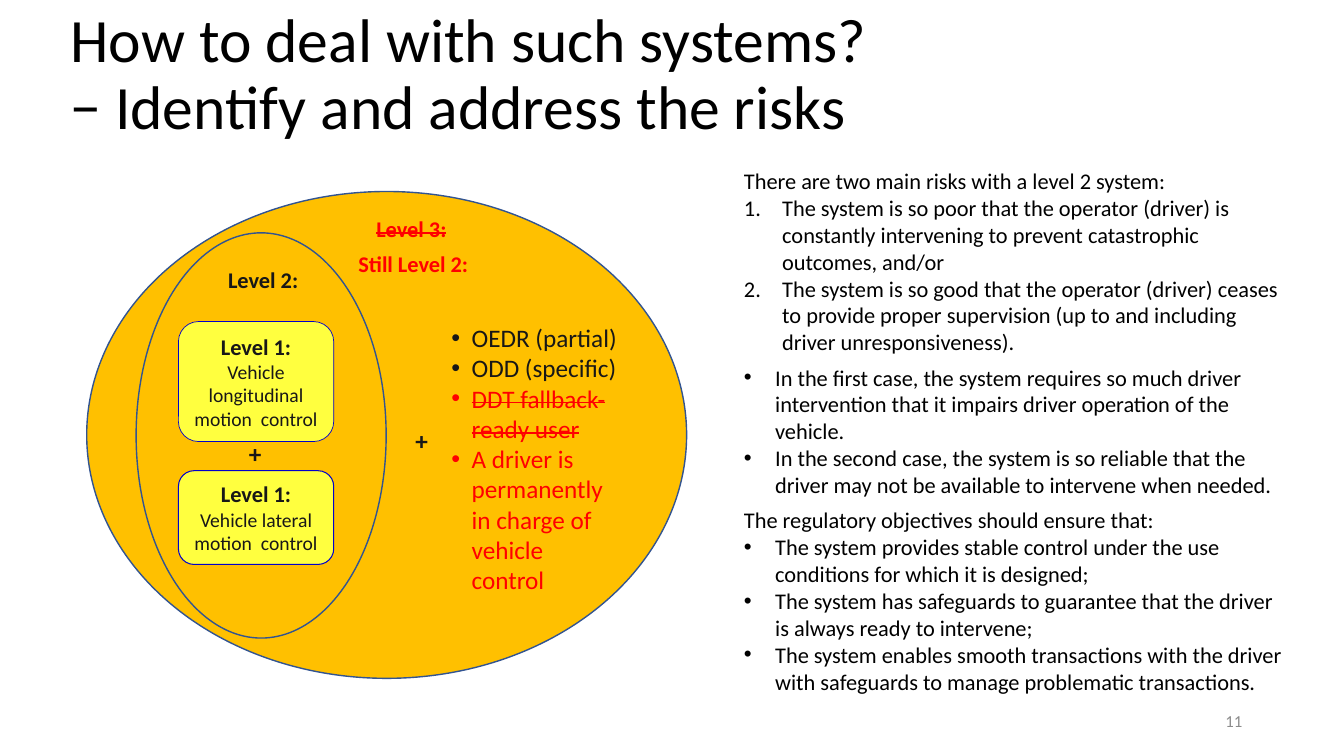
from dataclasses import dataclass
from typing import Optional

from lxml import etree
from pptx import Presentation
from pptx.dml.color import RGBColor
from pptx.enum.shapes import MSO_SHAPE
from pptx.enum.text import MSO_ANCHOR, PP_ALIGN
from pptx.oxml.ns import qn
from pptx.util import Inches, Pt

ELLIPSE, ROUNDED, RECTANGLE = MSO_SHAPE.OVAL, MSO_SHAPE.ROUNDED_RECTANGLE, MSO_SHAPE.RECTANGLE
LEFT, CENTER, RIGHT = PP_ALIGN.LEFT, PP_ALIGN.CENTER, PP_ALIGN.RIGHT
TOP, MIDDLE = MSO_ANCHOR.TOP, MSO_ANCHOR.MIDDLE
FONT = "Calibri"
COLORS = {
    "black": "000000", "ink": "181717", "red": "FF0000", "grey": "8C8C8C",
    "white": "FFFFFF", "orange": "FFC000", "yellow": "FFFF3F",
    "outline": "325491", "blue": "0000CC",
}
BULLET, NUMBER = "•", "1."


@dataclass
class Line:
    text: str
    size: int = 16
    color: str = "ink"
    bold: bool = False
    strike: bool = False
    align: PP_ALIGN = LEFT
    marker: str = ""
    indent: float = 0
    space_before: int = 0


@dataclass
class Block:
    """A text box, or a filled shape when preset is given."""
    box: tuple[float, float, float, float]
    lines: list[Line]
    preset: Optional[MSO_SHAPE] = None
    fill: str = "white"
    outline: str = ""
    outline_width: float = 1
    anchor: MSO_ANCHOR = TOP


def color(name: str) -> RGBColor:
    return RGBColor.from_string(COLORS[name])


def set_marker(paragraph, marker: str, indent: float) -> None:
    """Give the paragraph a hanging bullet or automatic number."""
    properties = paragraph._p.get_or_add_pPr()
    properties.set("marL", str(Inches(indent)))
    properties.set("indent", str(-Inches(indent)))
    if marker == NUMBER:
        etree.SubElement(properties, qn("a:buAutoNum"), type="arabicPeriod")
    else:
        etree.SubElement(properties, qn("a:buFont"), typeface="Arial")
        etree.SubElement(properties, qn("a:buChar"), char=marker)


def write_line(paragraph, line: Line) -> None:
    paragraph.alignment = line.align
    paragraph.space_before = Pt(line.space_before)
    if line.marker:
        set_marker(paragraph, line.marker, line.indent)
    run = paragraph.add_run()
    run.text = line.text
    for attribute, value in {"name": FONT, "size": Pt(line.size), "bold": line.bold}.items():
        setattr(run.font, attribute, value)
    run.font.color.rgb = color(line.color)
    if line.strike:
        run._r.get_or_add_rPr().set("strike", "sngStrike")


def draw_block(slide, block: Block) -> None:
    box = [Inches(length) for length in block.box]
    if block.preset is None:
        shape = slide.shapes.add_textbox(*box)
    else:
        shape = slide.shapes.add_shape(block.preset, *box)
        shape.shadow.inherit = False
        shape.fill.solid()
        shape.fill.fore_color.rgb = color(block.fill)
        if block.outline:
            shape.line.color.rgb = color(block.outline)
            shape.line.width = Pt(block.outline_width)
        else:
            shape.line.fill.background()
    frame = shape.text_frame
    frame.word_wrap = True
    frame.vertical_anchor = block.anchor
    if block.preset == ROUNDED:
        frame.margin_left = frame.margin_right = Inches(0.05)
    for index, line in enumerate(block.lines):
        write_line(frame.add_paragraph() if index else frame.paragraphs[0], line)


def heading(text: str, tint: str = "ink", strike: bool = False) -> Line:
    return Line(text, color=tint, bold=True, strike=strike, align=CENTER)


def level_one(top: float, height: float, control: str, outline_width: float) -> Block:
    return Block((1.77, top, 1.54, height),
                 [heading("Level 1:"), Line(control, 14, align=CENTER)],
                 ROUNDED, "yellow", "blue", outline_width, MIDDLE)


def plus(left: float, top: float) -> Block:
    return Block((left, top, 0.41, 0.37), [Line("+", 18, bold=True)])


def feature(text: str, tint: str = "ink", strike: bool = False) -> Line:
    return Line(text, 18, tint, strike=strike, marker=BULLET, indent=0.2)


def body(text: str, marker: str = "", space_before: int = 0) -> Line:
    indent = {NUMBER: 0.38, BULLET: 0.31}.get(marker, 0)
    return Line(text, color="black", marker=marker, indent=indent, space_before=space_before)


RISKS = [
    body("There are two main risks with a level 2 system:"),
    body("The system is so poor that the operator (driver) is constantly intervening to "
         "prevent catastrophic outcomes, and/or", NUMBER),
    body("The system is so good that the operator (driver) ceases to provide proper "
         "supervision (up to and including driver unresponsiveness).", NUMBER),
    body("In the first case, the system requires so much driver intervention that it "
         "impairs driver operation of the vehicle.", BULLET, 6),
    body("In the second case, the system is so reliable that the driver may not be "
         "available to intervene when needed.", BULLET),
    body("The regulatory objectives should ensure that:", space_before=6),
    body("The system provides stable control under the use conditions for which it is "
         "designed;", BULLET),
    body("The system has safeguards to guarantee that the driver is always ready to "
         "intervene;", BULLET),
    body("The system enables smooth transactions with the driver with safeguards to "
         "manage problematic transactions.", BULLET),
]
FEATURES = [
    feature("OEDR (partial)"),
    feature("ODD (specific)"),
    feature("DDT fallback-ready user", "red", True),
    feature("A driver is permanently in charge of vehicle control", "red"),
]
BLOCKS = [
    Block((0.86, 1.9, 5.95, 4.83), [], ELLIPSE, "orange", "outline"),
    Block((1.35, 2.31, 2.48, 4.02), [], ELLIPSE, "orange", "outline"),
    level_one(3.19, 1.19, "Vehicle longitudinal motion  control", 0.5),
    level_one(4.67, 0.93, "Vehicle lateral motion  control", 0.75),
    plus(2.37, 4.3),
    Block((1.77, 2.59, 1.68, 0.37), [heading("Level 2:")]),
    Block((3.24, 2.09, 1.68, 0.37), [heading("Level 3:", "red", True)]),
    Block((3.26, 2.43, 1.68, 0.37), [heading("Still Level 2:", "red")]),
    plus(4.02, 4.17),
    Block((4.38, 3.15, 1.86, 3.16), FEATURES),
    Block((9.42, 6.95, 3, 0.4), [Line("11", 12, "grey", align=RIGHT)], anchor=MIDDLE),
    Block((7.28, 1.61, 5.58, 5.39), RISKS, RECTANGLE),
]


def write_title(title) -> None:
    position = {"left": 0.6, "top": 0.03, "width": 11.5, "height": 1.45}
    for attribute, length in position.items():
        setattr(title, attribute, Inches(length))
    frame = title.text_frame
    frame.word_wrap = True
    frame.vertical_anchor = MIDDLE
    paragraph = frame.paragraphs[0]
    paragraph.text = "How to deal with such systems?\v− Identify and address the risks"
    paragraph.alignment = LEFT
    paragraph.line_spacing = 0.9
    for run in paragraph.runs:
        run.font.name = FONT
        run.font.size = Pt(44)
        run.font.color.rgb = color("black")


def main() -> None:
    presentation = Presentation()
    presentation.slide_width = Inches(13.33)
    presentation.slide_height = Inches(7.5)
    slide = presentation.slides.add_slide(presentation.slide_layouts[5])
    write_title(slide.shapes.title)
    for block in BLOCKS:
        draw_block(slide, block)
    presentation.save("out.pptx")


if __name__ == "__main__":
    main()
